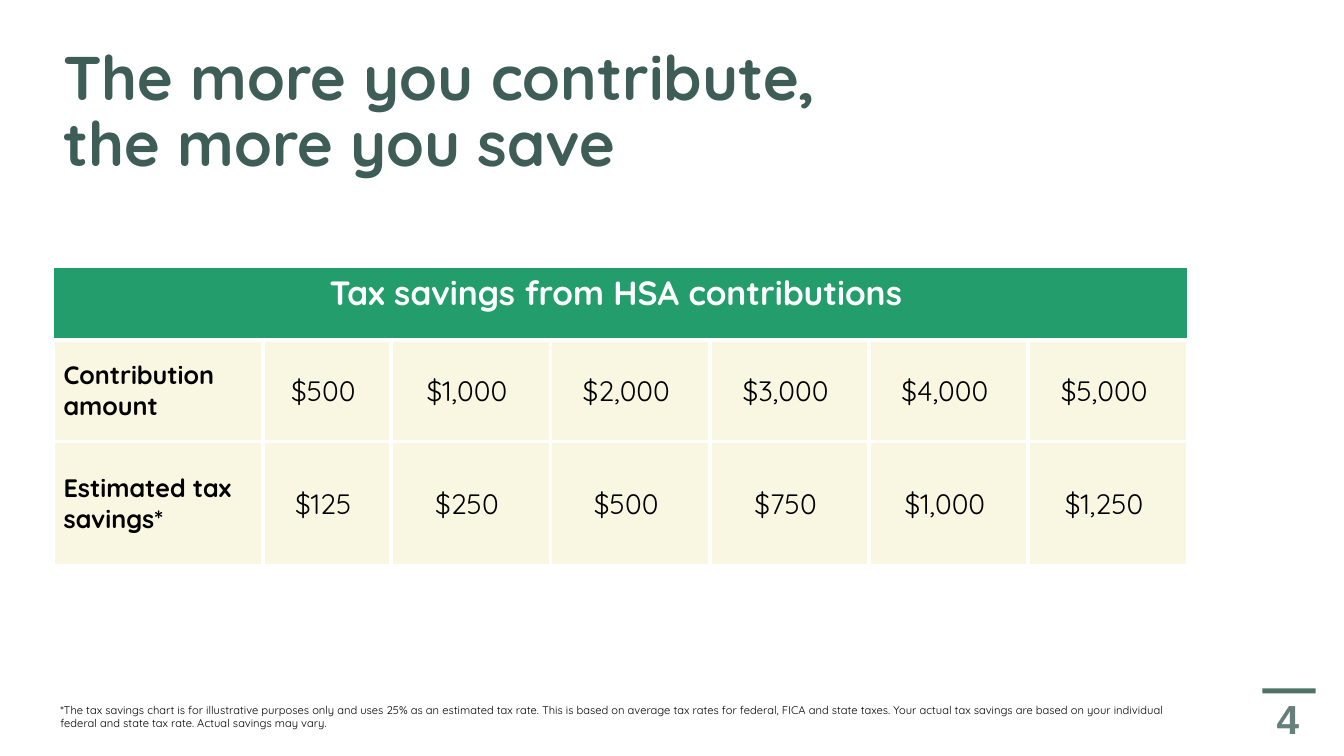
"""Builds the slide on tax savings from HSA contributions."""
import pptx
import pptx.dml.color
import pptx.enum.shapes
import pptx.enum.text
import pptx.oxml
import pptx.oxml.ns
import pptx.util
from dataclasses import dataclass

Inches, Pt = pptx.util.Inches, pptx.util.Pt
ANCHOR, ALIGN = pptx.enum.text.MSO_ANCHOR, pptx.enum.text.PP_ALIGN

TITLE = ["The more you contribute, ", "the more you save"]
HEADER = "Tax savings from HSA contributions "
ROWS = [
    ("Contribution amount", ["$500 ", "$1,000 ", "$2,000 ", "$3,000 ", "$4,000 ", "$5,000 "]),
    ("Estimated tax savings*", ["$125 ", "$250 ", "$500 ", "$750 ", "$1,000 ", "$1,250 "]),
]
FOOTNOTE = (
    "*The tax savings chart is for illustrative purposes only and uses 25% as an estimated tax rate. "
    "This is based on average tax rates for federal, FICA and state taxes. Your actual tax savings are "
    "based on your individual federal and state tax rate. Actual savings may vary."
)
PAGE_NUMBER = "4"
COL_WIDTHS = [2.08, 1.27] + [1.58] * 5
ROW_HEIGHTS = [0.72, 1.01, 1.23]


@dataclass(frozen=True)
class Theme:
    font: str = "Quicksand"
    number_font: str = "Arial"
    title: str = "3E5D57"
    accent: str = "1C4C3C"
    header: str = "239D6B"
    cell: str = "F9F6E2"
    text: str = "000000"
    white: str = "FFFFFF"
    title_size: int = 44
    number_size: int = 29
    header_size: int = 24
    label_size: int = 18
    value_size: int = 20
    note_size: int = 8
    alpha: int = 78


T = Theme()


def rgb(color):
    return pptx.dml.color.RGBColor.from_string(color)


def style(p, size, color, bold=False, align=ALIGN.LEFT, font=T.font):
    p.alignment = align
    p.font.size, p.font.bold, p.font.name = Pt(size), bold, font
    p.font.color.rgb = rgb(color)


def make_translucent(element):
    for color in element.iter(pptx.oxml.ns.qn("a:srgbClr")):
        alpha = color.makeelement(pptx.oxml.ns.qn("a:alpha"), {"val": str(T.alpha * 1000)})
        color.append(alpha)


def add_text(s, box, lines, anchor, *look, **options):
    tf = s.shapes.add_textbox(*map(Inches, box)).text_frame
    tf.word_wrap, tf.vertical_anchor = True, anchor
    p = tf.paragraphs[0]
    for i, line in enumerate(lines):
        if i:
            p.add_line_break()
        p.add_run().text = line
    style(p, *look, **options)
    return p


def set_borders(cell, widths):
    tcPr = cell._tc.get_or_add_tcPr()
    for side, width in zip("LRTB", widths):
        tcPr.append(pptx.oxml.parse_xml(
            f'<a:ln{side} {pptx.oxml.ns.nsdecls("a")} w="{Pt(width)}"><a:solidFill>'
            f'<a:srgbClr val="{T.white}"/></a:solidFill></a:ln{side}>'))


def fill_cell(cell, text, fill, borders, *look, **options):
    set_borders(cell, borders)
    cell.fill.solid()
    cell.fill.fore_color.rgb = rgb(fill)
    cell.text = text
    style(cell.text_frame.paragraphs[0], *look, **options)


def add_savings_table(s):
    frame = s.shapes.add_table(len(ROW_HEIGHTS), len(COL_WIDTHS), Inches(0.53), Inches(2.65),
                               Inches(sum(COL_WIDTHS)), Inches(sum(ROW_HEIGHTS)))
    table = frame.table
    for column, width in zip(table.columns, COL_WIDTHS):
        column.width = Inches(width)
    for row, height in zip(table.rows, ROW_HEIGHTS):
        row.height = Inches(height)

    for c in range(len(COL_WIDTHS)):
        fill_cell(table.cell(0, c), "" if c else HEADER, T.header, (1, 1, 1, 3),
                  T.header_size, T.white, True, ALIGN.CENTER)
    table.cell(0, 0).merge(table.cell(0, len(COL_WIDTHS) - 1))

    for r, (label, values) in enumerate(ROWS, 1):
        for c, text in enumerate([label, *values]):
            cell = table.cell(r, c)
            look = (T.value_size, T.text, False, ALIGN.CENTER) if c else (T.label_size, T.text, True)
            fill_cell(cell, text, T.cell, (3, 3, 3, 3), *look)
            cell.vertical_anchor = ANCHOR.MIDDLE
            if c:
                cell.margin_left = cell.margin_right = cell.margin_top = Inches(0.01)
                cell.margin_bottom = 0


def main():
    prs = pptx.Presentation()
    prs.slide_width, prs.slide_height = Inches(13.33), Inches(7.5)
    s = prs.slides.add_slide(prs.slide_layouts[6])

    bar = s.shapes.add_shape(pptx.enum.shapes.MSO_SHAPE.RECTANGLE,
                             *map(Inches, (12.52, 6.83, 0.53, 0.05)))
    bar.shadow.inherit = False
    bar.fill.solid()
    bar.fill.fore_color.rgb = rgb(T.accent)
    bar.line.fill.background()
    make_translucent(bar._element.spPr)

    title = add_text(s, (0.53, 0.4, 12.33, 1.45), TITLE, ANCHOR.MIDDLE, T.title_size, T.title, True)
    title.line_spacing = 0.9
    number = add_text(s, (12.41, 6.76, 0.73, 0.74), [PAGE_NUMBER], ANCHOR.MIDDLE,
                      T.number_size, T.title, True, ALIGN.CENTER, font=T.number_font)
    make_translucent(number._p)
    add_savings_table(s)
    add_text(s, (0.5, 6.77, 11.26, 0.52), [FOOTNOTE], ANCHOR.BOTTOM, T.note_size, T.text)
    prs.save("out.pptx")


if __name__ == "__main__":
    main()
